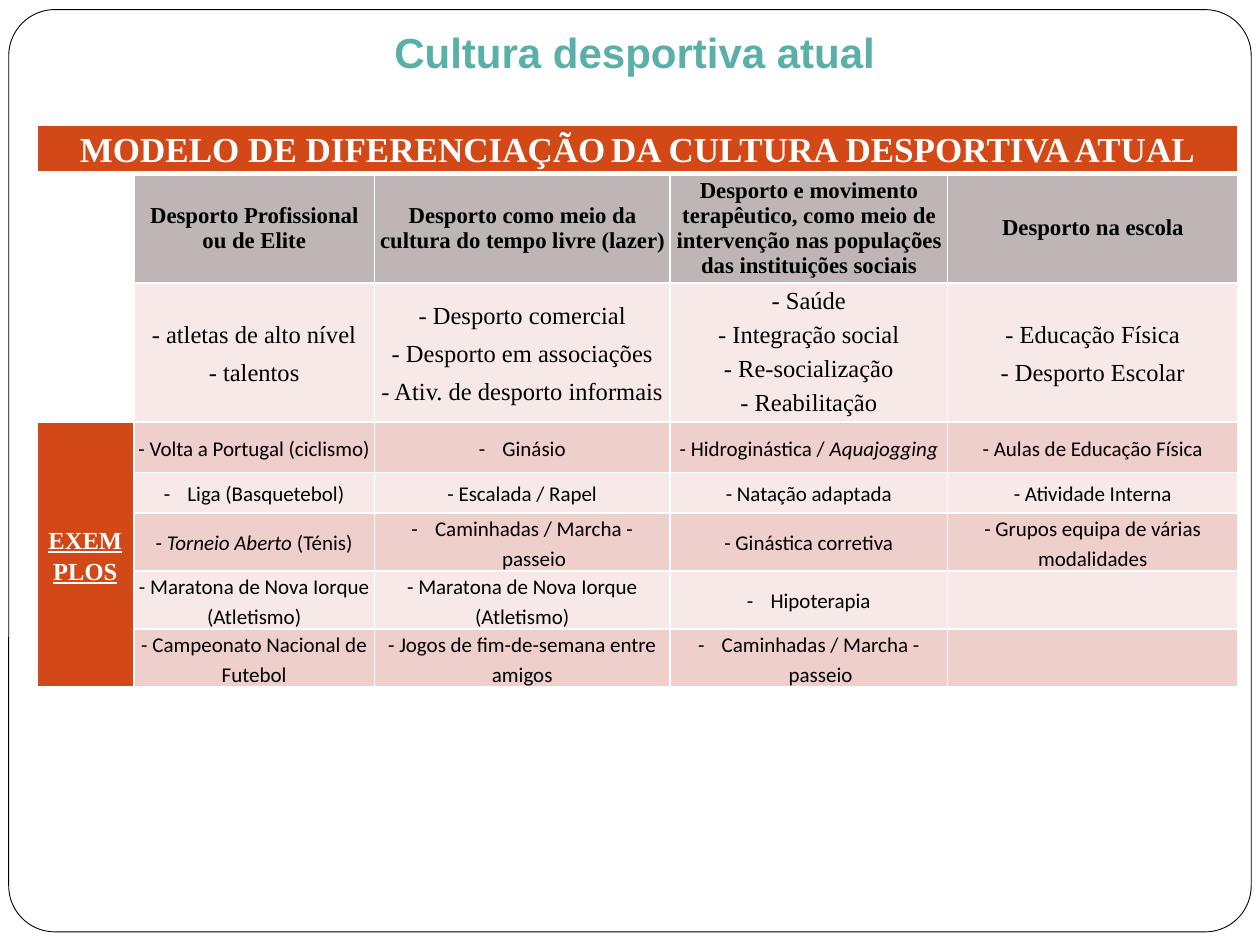
import pptx
import pptx.dml.color
import pptx.enum.shapes
import pptx.enum.text
import pptx.oxml.ns
import pptx.util
from lxml import etree

Pt = pptx.util.Pt
RGBColor = pptx.dml.color.RGBColor
ANCHOR = pptx.enum.text.MSO_ANCHOR
CENTER = pptx.enum.text.PP_ALIGN.CENTER
qn = pptx.oxml.ns.qn

WHITE = RGBColor(0xFF, 0xFF, 0xFF)
BLACK = RGBColor(0, 0, 0)
TEAL = RGBColor(0x5A, 0xB0, 0xA8)
ORANGE = RGBColor(0xD3, 0x48, 0x17)
GREY = RGBColor(0xBD, 0xB5, 0xB6)
PINK = RGBColor(0xEF, 0xCF, 0xCC)
PALE = RGBColor(0xF7, 0xE9, 0xE8)

SERIF, SANS = "Times New Roman", "Calibri"
BULLET = "•"  # marks a paragraph that gets a hanging dash

COLS = [55.5, 137.5, 169, 158.5, 166]
ROWS = [27, 62.5, 79.5, 29, 23, 33, 33, 33]
HEADS = [
    "Desporto Profissional ou de Elite",
    "Desporto como meio da cultura do tempo livre (lazer)",
    "Desporto e movimento terapêutico, como meio de intervenção nas "
    "populações das instituições sociais",
    "Desporto na escola",
]
KINDS = [
    "- atletas de alto nível\n- talentos",
    "- Desporto comercial\n- Desporto em associações\n- Ativ. de desporto informais",
    "- Saúde\n- Integração social\n- Re-socialização\n- Reabilitação",
    "- Educação Física\n- Desporto Escolar",
]
EXAMPLES = [  # asterisks enclose italics
    ["- Volta a Portugal (ciclismo)", "•Ginásio",
     "- Hidroginástica / *Aquajogging*", "- Aulas de Educação Física"],
    ["•Liga (Basquetebol)", "- Escalada / Rapel",
     "- Natação adaptada", "- Atividade Interna"],
    ["- *Torneio Aberto* (Ténis)", "•Caminhadas / Marcha - passeio",
     "- Ginástica corretiva", "- Grupos equipa de várias modalidades"],
    ["- Maratona de Nova Iorque (Atletismo)", "- Maratona de Nova Iorque (Atletismo)",
     "•Hipoterapia", ""],
    ["- Campeonato Nacional de Futebol", "- Jogos de fim-de-semana entre amigos",
     "•Caminhadas / Marcha - passeio", ""],
]


def add_text(p, text, font=SERIF, size=12, color=BLACK, bold=False, underline=False):
    """Append text to a paragraph; parts between asterisks are italic."""
    for i, part in enumerate(text.split("*")):
        if part:
            r = p.add_run()
            r.text = part
            r.font.name, r.font.size = font, Pt(size)
            r.font.bold, r.font.italic = bold, i % 2 == 1
            r.font.underline = underline
            r.font.color.rgb = color


class Deck:
    def __init__(self, prs):
        self.prs = prs
        self.s = prs.slides.add_slide(prs.slide_layouts[5])

    def frame(self, x, y, w, h):
        sp = self.s.shapes.add_shape(
            pptx.enum.shapes.MSO_SHAPE.ROUNDED_RECTANGLE, Pt(x), Pt(y), Pt(w), Pt(h))
        sp.adjustments[0] = 0.05
        sp.shadow.inherit = False
        sp.fill.solid()
        sp.fill.fore_color.rgb = WHITE
        sp.line.color.rgb = BLACK
        sp.line.width = Pt(0.5)
        self.s.shapes._spTree.insert(2, sp._element)  # behind the title

    def title(self, text, x, y, w, h):
        sp = self.s.shapes.title
        sp.left, sp.top, sp.width, sp.height = Pt(x), Pt(y), Pt(w), Pt(h)
        tf = sp.text_frame
        tf.word_wrap = False
        tf.auto_size = pptx.enum.text.MSO_AUTO_SIZE.SHAPE_TO_FIT_TEXT
        tf.vertical_anchor = ANCHOR.TOP
        p = tf.paragraphs[0]
        p.alignment = CENTER
        add_text(p, text, font="Arial", size=24, color=TEAL, bold=True)

    def table(self, x, y, cols, rows):
        gf = self.s.shapes.add_table(
            len(rows), len(cols), Pt(x), Pt(y), Pt(sum(cols)), Pt(sum(rows)))
        tbl = gf.table
        tbl.first_row = tbl.horz_banding = False
        for col, w in zip(tbl.columns, cols):
            col.width = Pt(w)
        for row, h in zip(tbl.rows, rows):
            row.height = Pt(h)
        return tbl

    def cell(self, c, fill, text="", spacing=1.15, gap=2, top=1, bottom=1, **fmt):
        c.fill.solid()
        c.fill.fore_color.rgb = fill
        c.margin_left = c.margin_right = Pt(2.5)
        c.margin_top = c.margin_bottom = 0
        c.vertical_anchor = ANCHOR.MIDDLE
        self.borders(c, lnL=1, lnR=1, lnT=top, lnB=bottom)
        tf = c.text_frame
        for i, line in enumerate(text.split("\n")):
            p = tf.add_paragraph() if i else tf.paragraphs[0]
            p.alignment = CENTER
            p.line_spacing = spacing
            p.space_before = p.space_after = Pt(gap)
            if line.startswith(BULLET):
                self.dash(p)
            add_text(p, line.lstrip(BULLET), **fmt)

    def borders(self, c, **widths):
        tcPr = c._tc.get_or_add_tcPr()
        for i, (side, w) in enumerate(widths.items()):
            ln = etree.Element(qn("a:" + side), w=str(Pt(w)))
            fill = etree.SubElement(ln, qn("a:solidFill"))
            etree.SubElement(fill, qn("a:srgbClr"), val=str(WHITE))
            tcPr.insert(i, ln)

    def dash(self, p):
        pPr = p._p.get_or_add_pPr()
        pPr.set("marL", str(Pt(13.5)))
        pPr.set("indent", str(-Pt(13.5)))
        etree.SubElement(pPr, qn("a:buFont"), typeface=SANS)
        etree.SubElement(pPr, qn("a:buChar"), char="-")


def main():
    prs = pptx.Presentation()
    prs.slide_width, prs.slide_height = Pt(720), Pt(540)
    d = Deck(prs)

    # Page frame and title
    d.frame(5, 5.5, 710, 527)
    d.title("Cultura desportiva atual", 217, 11.5, 291.5, 36)

    # Table banner
    tbl = d.table(21, 71.5, COLS, ROWS)
    for c in range(len(COLS)):
        d.cell(tbl.cell(0, c), ORANGE, gap=6, bottom=3)
    banner = tbl.cell(0, 0)
    banner.merge(tbl.cell(0, len(COLS) - 1))
    banner.vertical_anchor = ANCHOR.TOP
    for text, size in [("MODELO DE DIFERENCIAÇÃO", 20), (" ", 12),
                       ("DA CULTURA DESPORTIVA ATUAL", 20)]:
        add_text(banner.text_frame.paragraphs[0], text, size=size, color=WHITE, bold=True)

    # Column heads and kinds of sport
    d.cell(tbl.cell(1, 0), WHITE, top=3)
    d.cell(tbl.cell(2, 0), WHITE)
    for c, (head, kinds) in enumerate(zip(HEADS, KINDS), 1):
        d.cell(tbl.cell(1, c), GREY, head, spacing=1, gap=6, top=3, size=13, bold=True)
        d.cell(tbl.cell(2, c), PALE, kinds, spacing=1 if c == 3 else 1.15, size=14)

    # Examples
    for r, row in enumerate(EXAMPLES, 3):
        d.cell(tbl.cell(r, 0), ORANGE, "EXEMPLOS" if r == 3 else "",
               size=14, color=WHITE, bold=True, underline=True)
        for c, text in enumerate(row, 1):
            d.cell(tbl.cell(r, c), PINK if r % 2 else PALE, text, font=SANS)
    side = tbl.cell(3, 0)
    side.merge(tbl.cell(len(ROWS) - 1, 0))
    side._tc.get_or_add_tcPr().set("vert", "wordArtVert")

    prs.save("out.pptx")


if __name__ == "__main__":
    main()
